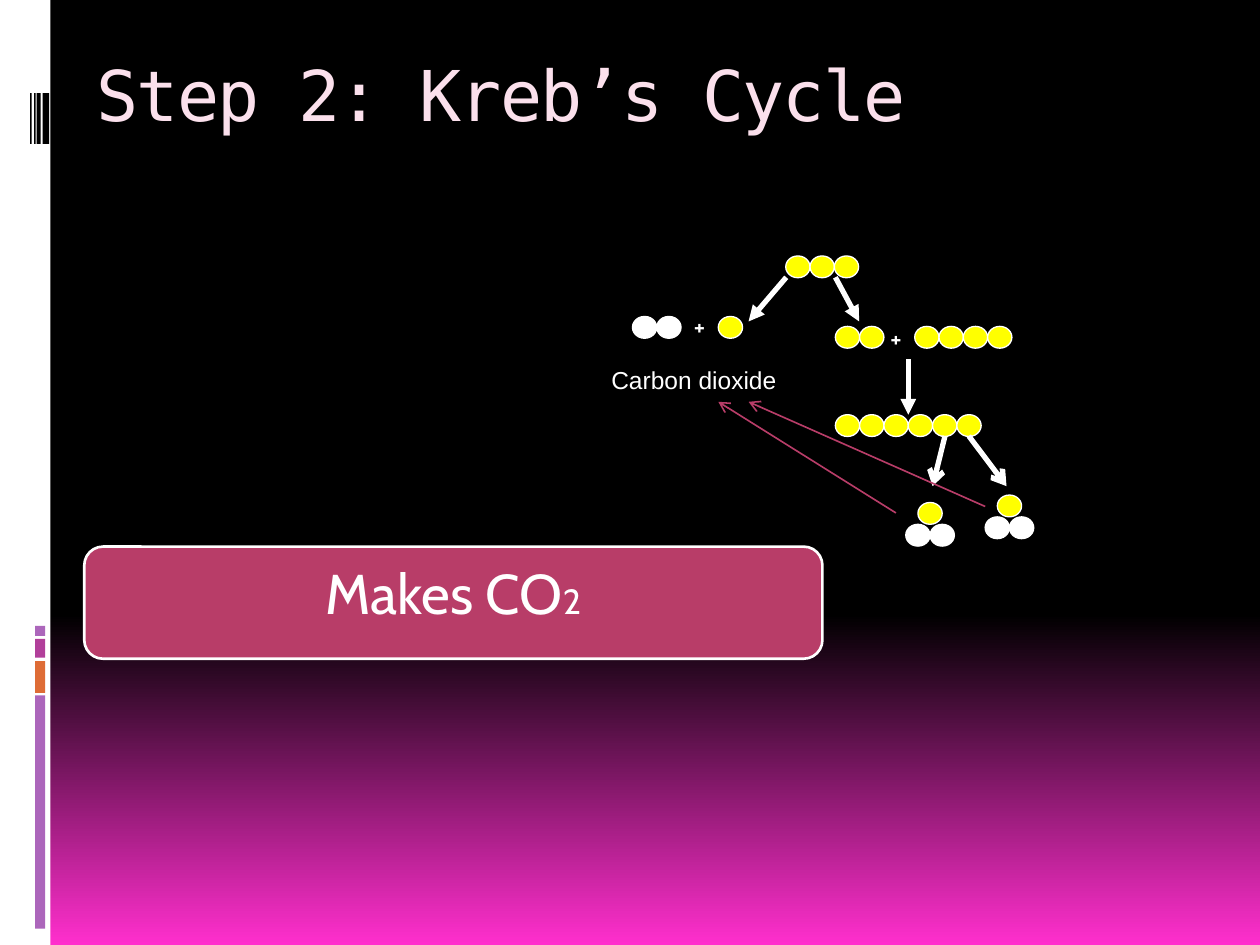
from pptx import Presentation
from pptx.dml.color import RGBColor
from pptx.enum.shapes import MSO_CONNECTOR, MSO_SHAPE
from pptx.enum.text import MSO_ANCHOR, PP_ALIGN
from pptx.oxml.ns import qn
from pptx.util import Cm, Pt
from lxml.etree import SubElement

BLACK = RGBColor(0x00, 0x00, 0x00)
WHITE = RGBColor(0xFF, 0xFF, 0xFF)
YELLOW = RGBColor(0xFF, 0xFF, 0x00)
MAGENTA = RGBColor(0xFF, 0x2F, 0xCD)
PALE_PINK = RGBColor(0xFB, 0xE0, 0xEC)
ROSE = RGBColor(0xB8, 0x3D, 0x68)
PURPLE = RGBColor(0xAC, 0x66, 0xBB)
ORANGE = RGBColor(0xDE, 0x6C, 0x36)
PLUM = RGBColor(0xB1, 0x3F, 0x9A)

ATOM_W, ATOM_H = 0.49, 0.44

# left, top, width, height, colour
SIDEBAR = [
    (0, 0, 1.02, 19.05, WHITE),
    (0.71, 14.02, 0.2, 4.7, PURPLE),
    (0.71, 13.33, 0.2, 0.64, ORANGE),
    (0.71, 12.88, 0.2, 0.38, PLUM),
    (0.71, 12.62, 0.2, 0.2, PURPLE),
]
BARCODE = [(0.86, 0.13), (0.74, 0.08), (0.69, 0.03), (0.61, 0.03)]  # left, width

# left, top, number of atoms, colour
CHAINS = [
    (15.84, 5.16, 3, YELLOW),
    (12.75, 6.38, 2, WHITE),
    (14.48, 6.38, 1, YELLOW),
    (16.84, 6.58, 2, YELLOW),
    (18.44, 6.58, 4, YELLOW),
    (16.84, 8.36, 6, YELLOW),
]
RELEASED_CO2 = [(18.26, 10.57), (19.86, 10.42)]  # left, top of the oxygen pair

# start, end, arrowhead
STEP_ARROWS = [
    ((15.85, 5.59), (15.09, 6.48), "triangle"),
    ((16.84, 5.59), (17.32, 6.48), "triangle"),
    ((18.31, 7.24), (18.31, 8.36), "triangle"),
    ((19.05, 8.79), (18.8, 9.8), "arrow"),
    ((19.53, 8.79), (20.29, 9.8), "arrow"),
]
LABEL_ARROWS = [((18.06, 10.34), (14.48, 8.1)), ((19.86, 10.21), (15.09, 8.1))]


def set_background(s):
    fill = s.background.fill
    fill.gradient()
    fill.gradient_angle = 270
    for stop, position, color in zip(fill.gradient_stops, (0.65, 1), (BLACK, MAGENTA)):
        stop.position = position
        stop.color.rgb = color


def add_shape(s, kind, left, top, width, height, color, line_pt=0):
    sp = s.shapes.add_shape(kind, Cm(left), Cm(top), Cm(width), Cm(height))
    sp.shadow.inherit = False
    sp.fill.solid()
    sp.fill.fore_color.rgb = color
    if line_pt:
        sp.line.color.rgb = WHITE
        sp.line.width = Pt(line_pt)
    else:
        sp.line.fill.background()
    return sp


def add_chain(s, left, top, count, color):
    for i in range(count):
        add_shape(s, MSO_SHAPE.OVAL, left + i * ATOM_W, top, ATOM_W, ATOM_H, color, 0.75)


def add_arrow(s, start, end, color, width, head):
    x1, y1, x2, y2 = (Cm(v) for v in start + end)
    c = s.shapes.add_connector(MSO_CONNECTOR.STRAIGHT, x1, y1, x2, y2)
    c.line.color.rgb = color
    c.line.width = Pt(width)
    SubElement(c.line._get_or_add_ln(), qn("a:tailEnd"), type=head)
    SubElement(c._element.spPr, qn("a:effectLst"))


def format_run(r, size, font, color=WHITE, bold=False):
    r.font.size = Pt(size)
    r.font.name = font
    r.font.color.rgb = color
    r.font.bold = bold


def add_text(s, box, text, size, font, color=WHITE, bold=False,
             align=PP_ALIGN.LEFT, anchor=MSO_ANCHOR.TOP):
    tf = s.shapes.add_textbox(*(Cm(v) for v in box)).text_frame
    tf.word_wrap = True
    tf.vertical_anchor = anchor
    p = tf.paragraphs[0]
    p.text = text
    p.alignment = align
    r = p.runs[0]
    format_run(r, size, font, color, bold)
    return r


def add_banner(s):
    sp = add_shape(s, MSO_SHAPE.ROUNDED_RECTANGLE, 1.7, 11.02, 14.88, 2.26, ROSE, 1.5)
    tf = sp.text_frame
    tf.vertical_anchor = MSO_ANCHOR.TOP
    p = tf.paragraphs[0]
    p.alignment = PP_ALIGN.CENTER
    for text, size in (("Makes CO", 32), ("2", 20)):
        r = p.add_run()
        r.text = text
        format_run(r, size, "Cabin")


def main():
    prs = Presentation()
    prs.slide_width, prs.slide_height = Cm(25.4), Cm(19.05)
    s = prs.slides.add_slide(prs.slide_layouts[6])
    set_background(s)

    # Sidebar decoration
    for left, top, width, height, color in SIDEBAR:
        add_shape(s, MSO_SHAPE.RECTANGLE, left, top, width, height, color)
    for left, width in BARCODE:
        add_shape(s, MSO_SHAPE.RECTANGLE, left, 1.88, width, 1.02, BLACK)

    # Title
    title = add_text(s, (1.7, 0.84, 20.75, 2.11), "Step 2: Kreb’s Cycle", 40,
                     "DejaVu Sans Mono", PALE_PINK, anchor=MSO_ANCHOR.MIDDLE)
    title.font._element.set("spc", "-100")

    # Molecules
    for chain in CHAINS:
        add_chain(s, *chain)
    for left, top in RELEASED_CO2:
        add_chain(s, left + ATOM_W / 2, top - ATOM_H, 1, YELLOW)
        add_chain(s, left, top, 2, WHITE)

    # Reaction arrows and labels
    for start, end, head in STEP_ARROWS:
        add_arrow(s, start, end, WHITE, 3, head)
    for left, top in ((17.7, 6.38), (13.74, 6.15)):
        add_text(s, (left, top, 0.74, 0.86), "+", 14, "Cabin", bold=True)
    add_text(s, (12.01, 7.24, 3.96, 0.86), "Carbon dioxide", 14, "Arial",
             align=PP_ALIGN.CENTER)

    # Result banner and pointers to the carbon dioxide label
    add_banner(s)
    for start, end in LABEL_ARROWS:
        add_arrow(s, start, end, ROSE, 0.94, "arrow")

    prs.save("out.pptx")


if __name__ == "__main__":
    main()
